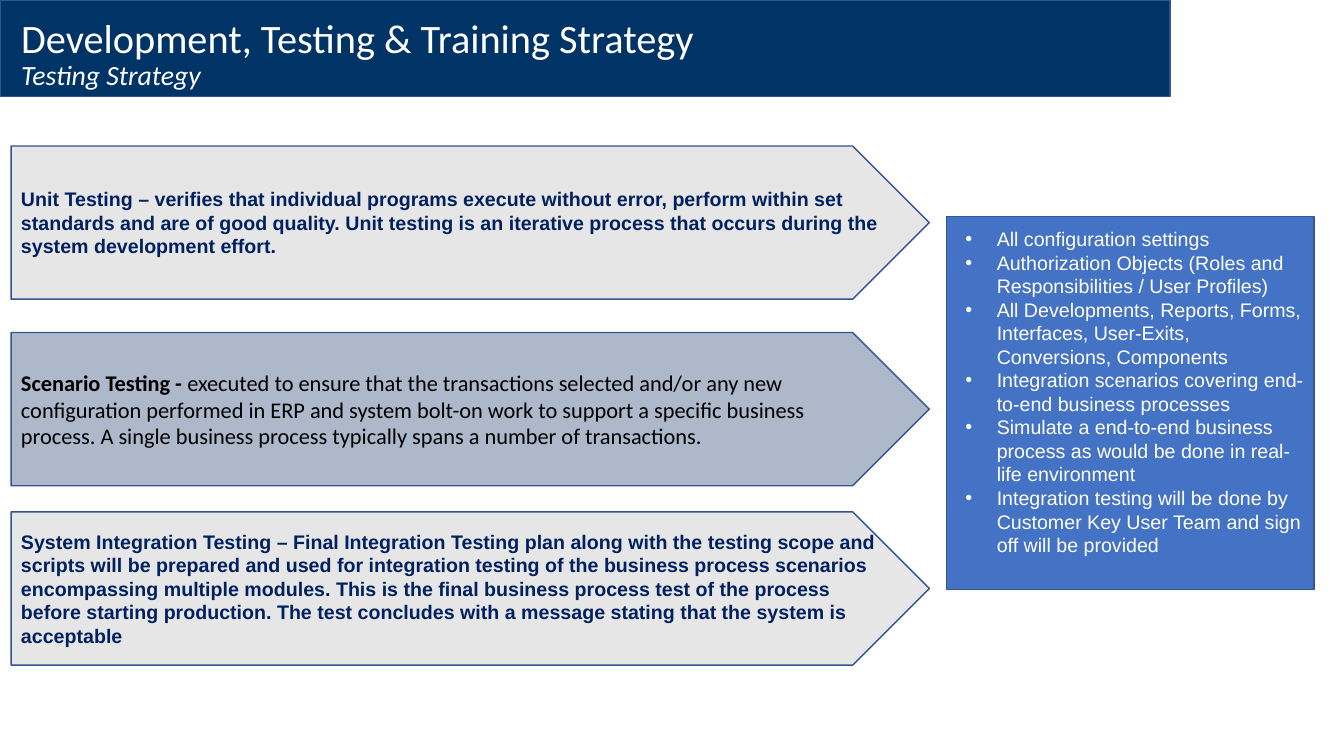
from lxml import etree
from pptx import Presentation
from pptx.dml.color import RGBColor
from pptx.enum.shapes import MSO_SHAPE as Shape
from pptx.enum.text import MSO_ANCHOR as Anchor, MSO_AUTO_SIZE as AutoSize, PP_ALIGN as Align
from pptx.oxml.ns import qn
from pptx.util import Cm, Pt

NAVY, OUTLINE, WHITE = "003366", "325491", "FFFFFF"
GREY, BLUE_GREY, BLUE = "E7E6E6", "ADB9CA", "4472C4"
DARK_BLUE, BLACK = "002060", "000000"

# Each stage: top in cm, fill, text colour, font, size, spans of (text, bold)
STAGES = [
    (3.68, GREY, DARK_BLUE, "Arial", 14, [
        ("Unit Testing – verifies that individual programs execute without error, "
         "perform within set standards and are of good quality. Unit testing is an "
         "iterative process that occurs during the system development effort.", True)]),
    (8.38, BLUE_GREY, BLACK, "Calibri", 16, [
        ("Scenario Testing -", True),
        (" executed to ensure that the transactions selected and/or any new "
         "configuration performed in ERP and system bolt-on work to support a specific "
         "business process. A single business process typically spans a number of "
         "transactions.", False)]),
    (12.9, GREY, DARK_BLUE, "Arial", 14, [
        ("System Integration Testing – Final Integration Testing plan along with the "
         "testing scope and scripts will be prepared and used for integration testing of "
         "the business process scenarios encompassing multiple modules. This is the final "
         "business process test of the process before starting production. The test "
         "concludes with a message stating that the system is acceptable", True)]),
]

SCOPE = [
    "All configuration settings",
    "Authorization Objects (Roles and Responsibilities / User Profiles)",
    "All Developments, Reports, Forms, Interfaces, User-Exits, Conversions, Components",
    "Integration scenarios covering end-to-end business processes",
    "Simulate a end-to-end business process as would be done in real-life environment",
    "Integration testing will be done by Customer Key User Team and sign off will be provided",
]


def colour(hex_string):
    return RGBColor.from_string(hex_string)


def add_span(para, text, font, size, text_colour, bold=False, italic=False):
    span = para.add_run()
    span.text = text
    span.font.name = font
    span.font.size = Pt(size)
    span.font.color.rgb = colour(text_colour)
    span.font.bold = bold
    span.font.italic = italic


def add_box(page, kind, left, top, width, height, fill):
    box = page.shapes.add_shape(kind, Cm(left), Cm(top), Cm(width), Cm(height))
    box.shadow.inherit = False
    box.fill.solid()
    box.fill.fore_color.rgb = colour(fill)
    box.line.color.rgb = colour(OUTLINE)
    box.line.width = Pt(1)
    box.text_frame.word_wrap = True
    box.text_frame.vertical_anchor = Anchor.MIDDLE
    return box


def add_bullet(para, indent, hanging):
    properties = para._p.get_or_add_pPr()
    properties.set("marL", str(Cm(indent)))
    properties.set("indent", str(-Cm(hanging)))
    etree.SubElement(properties, qn("a:buFont")).set("typeface", "Arial")
    etree.SubElement(properties, qn("a:buChar")).set("char", "•")


def add_header(page, left, top, width, height):
    banner = add_box(page, Shape.RECTANGLE, left, top, width, height, NAVY)
    title = page.shapes.title
    title._element.addprevious(banner._element)  # banner goes behind the title
    title.left, title.top = Cm(left + 0.28), Cm(top + 0.2)
    title.width, title.height = Cm(width - 0.28), Cm(height - 0.2)
    frame = title.text_frame
    frame.word_wrap = True
    frame.auto_size = AutoSize.NONE
    frame.vertical_anchor = Anchor.BOTTOM
    para = frame.paragraphs[0]
    para.alignment = Align.LEFT
    para.line_spacing = 0.9
    add_span(para, "Development, Testing & Training Strategy", "Calibri", 28.8, WHITE)
    para.add_line_break()
    add_span(para, "Testing Strategy", "Calibri", 19.8, WHITE, italic=True)


def add_stage(page, left, top, width, height, fill, text_colour, font, size, spans):
    arrow = add_box(page, Shape.PENTAGON, left, top, width, height, fill)
    para = arrow.text_frame.paragraphs[0]
    para.alignment = Align.LEFT
    for text, bold in spans:
        add_span(para, text, font, size, text_colour, bold)


def add_scope(page, left, top, width, height):
    frame = add_box(page, Shape.RECTANGLE, left, top, width, height, BLUE).text_frame
    frame.margin_bottom = Cm(0.7)
    for index, item in enumerate(SCOPE):
        para = frame.add_paragraph() if index else frame.paragraphs[0]
        para.alignment = Align.LEFT
        add_bullet(para, 1.02, 0.79)
        add_span(para, item, "Arial", 14, WHITE)


def main():
    deck = Presentation()
    deck.slide_width, deck.slide_height = Cm(33.87), Cm(19.05)
    page = deck.slides.add_slide(deck.slide_layouts[5])
    add_header(page, 0, 0, 29.49, 2.44)
    for top, *style in STAGES:
        add_stage(page, 0.28, top, 23.14, 3.86, *style)
    add_scope(page, 23.85, 5.46, 9.27, 9.4)
    deck.save("out.pptx")


if __name__ == "__main__":
    main()
